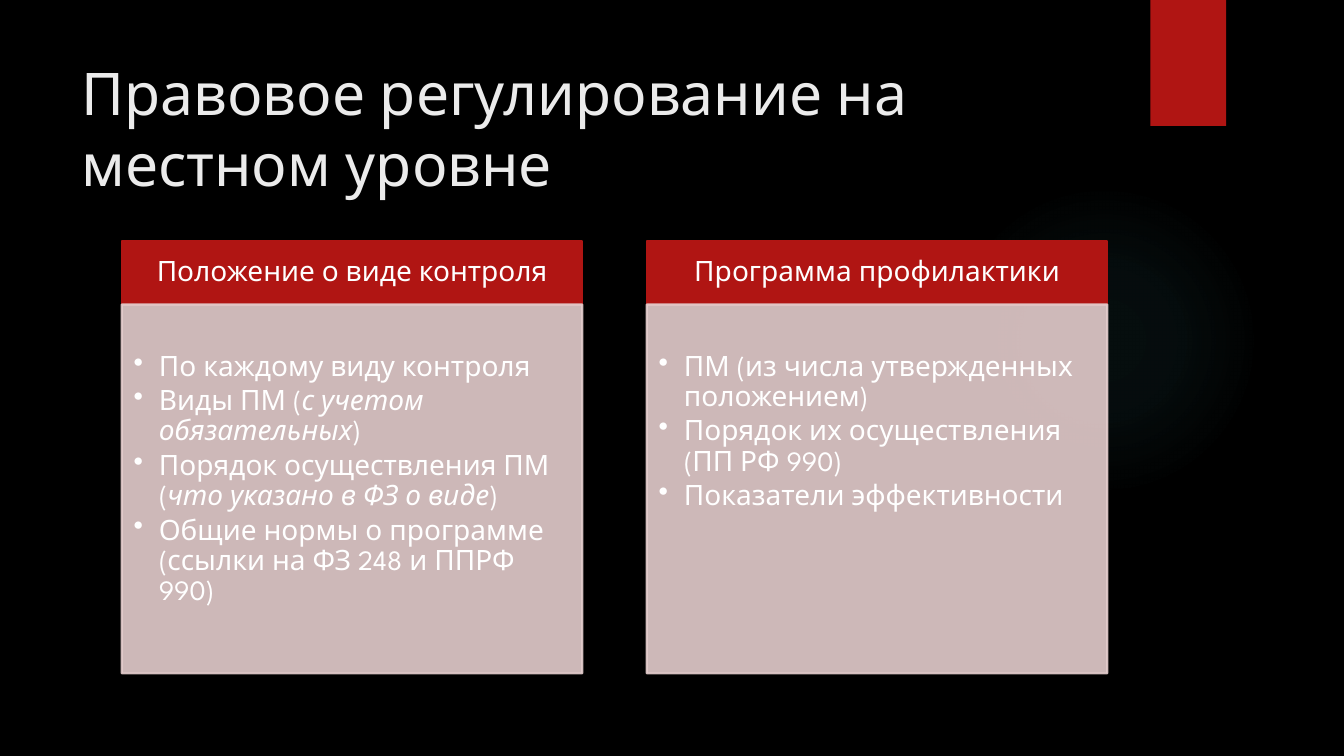
from lxml import etree
from pptx import Presentation
from pptx.dml.color import RGBColor
from pptx.enum.shapes import MSO_SHAPE
from pptx.enum.text import MSO_ANCHOR, PP_ALIGN
from pptx.oxml import parse_xml
from pptx.oxml.ns import nsdecls, qn
from pptx.util import Pt

RECT, OVAL = MSO_SHAPE.RECTANGLE, MSO_SHAPE.OVAL
MIDDLE, TOP = MSO_ANCHOR.MIDDLE, MSO_ANCHOR.TOP
LEFT, CENTER = PP_ALIGN.LEFT, PP_ALIGN.CENTER

FONT = "League Spartan"
BLACK, RED, PINK = "000000", "B01513", "E4CCCC"
WHITE, OFF_WHITE, TEAL = "FFFFFF", "EBEBEB", "50B9C1"
HEADER_H = 45.5
INDENT = 18

# Each bullet is a list of (text, italic) runs.
COLUMNS = [
    ("Положение о виде контроля", [
        [("По каждому виду контроля", False)],
        [("Виды ПМ (", False), ("с учетом обязательных", True), (")", False)],
        [("Порядок осуществления ПМ (", False),
         ("что указано в ФЗ о виде", True), (")", False)],
        [("Общие нормы о программе (ссылки на ФЗ 248 и ППРФ 990)", False)],
    ]),
    ("Программа профилактики", [
        [("ПМ (из числа утвержденных положением)", False)],
        [("Порядок их осуществления (ПП РФ 990)", False)],
        [("Показатели эффективности", False)],
    ]),
]


def rgb(value):
    return RGBColor.from_string(value)


def set_alpha(fill, percent):
    color = fill._xPr.find(qn("a:solidFill"))[0]
    etree.SubElement(color, qn("a:alpha"), val=str(percent * 1000))


def add_box(slide, kind, box, color, line=None):
    sp = slide.shapes.add_shape(kind, *map(Pt, box))
    sp.shadow.inherit = False
    sp.fill.solid()
    sp.fill.fore_color.rgb = rgb(color)
    if line:
        sp.line.color.rgb = rgb(line)
        sp.line.width = Pt(1.5)
    else:
        sp.line.fill.background()
    return sp


def set_frame(sp, anchor, insets):
    """Prepare the text frame; insets are left, top, right, bottom."""
    tf = sp.text_frame
    tf.word_wrap = True
    tf.vertical_anchor = anchor
    tf.margin_left, tf.margin_top, tf.margin_right, tf.margin_bottom = map(Pt, insets)
    return tf


def add_run(p, text, size, color, italic=False):
    r = p.add_run()
    r.text = text
    r.font.name = FONT
    r.font.size = Pt(size)
    r.font.italic = italic
    r.font.color.rgb = rgb(color)


def add_bullet(p):
    pPr = p._p.get_or_add_pPr()
    pPr.set("marL", str(Pt(INDENT)))
    pPr.set("indent", str(-Pt(INDENT)))
    etree.SubElement(pPr, qn("a:buChar"), char="•")


def add_glow(slide, box):
    """Faint teal circle that fades out towards its edge."""
    sp = add_box(slide, OVAL, box, TEAL)
    stops = "".join(
        f'<a:gs pos="{pos * 1000}"><a:srgbClr val="{TEAL}">'
        f'<a:alpha val="{alpha * 1000}"/></a:srgbClr></a:gs>'
        for pos, alpha in [(0, 7), (36, 6), (69, 0)])
    gradient = parse_xml(
        f'<a:gradFill {nsdecls("a")}><a:gsLst>{stops}</a:gsLst><a:path path="circle">'
        '<a:fillToRect l="50000" t="50000" r="50000" b="50000"/></a:path></a:gradFill>')
    spPr = sp._element.spPr
    spPr.replace(spPr.find(qn("a:solidFill")), gradient)


def add_title(slide, box, text):
    tf = set_frame(slide.shapes.add_textbox(*map(Pt, box)), MIDDLE, (7.2, 3.6, 7.2, 3.6))
    add_run(tf.paragraphs[0], text, 42, OFF_WHITE)


def add_column(slide, box, heading, bullets):
    """Red header above a pale panel of bullets."""
    x, y, w, h = box
    header = add_box(slide, RECT, (x, y, w, HEADER_H), RED, RED)
    p = set_frame(header, MIDDLE, (11.5, 6.5, 11.5, 6.5)).paragraphs[0]
    p.alignment = CENTER
    p.line_spacing = 0.9
    add_run(p, heading, 20, WHITE)

    panel = add_box(slide, RECT, (x, y + HEADER_H, w, h - HEADER_H), PINK, PINK)
    set_alpha(panel.fill, 90)
    set_alpha(panel.line.fill, 90)
    tf = set_frame(panel, TOP, (8.5, 34, 11.5, 12))
    for i, runs in enumerate(bullets):
        p = tf.add_paragraph() if i else tf.paragraphs[0]
        p.alignment = LEFT
        p.line_spacing = 0.9
        p.space_after = Pt(3)
        add_bullet(p)
        for text, italic in runs:
            add_run(p, text, 20, WHITE, italic)


def main():
    prs = Presentation()
    prs.slide_width, prs.slide_height = Pt(960), Pt(540)
    slide = prs.slides.add_slide(prs.slide_layouts[6])
    slide.background.fill.solid()
    slide.background.fill.fore_color.rgb = rgb(BLACK)

    add_glow(slide, (677.5, 132, 222, 222))
    add_box(slide, RECT, (821.75, 0, 54, 90), RED)
    add_title(slide, (51, 36, 741, 110), "Правовое регулирование на местном уровне")
    for i, (heading, bullets) in enumerate(COLUMNS):
        add_column(slide, (87 + 375 * i, 172, 329, 309), heading, bullets)
    prs.save("out.pptx")


if __name__ == "__main__":
    main()
